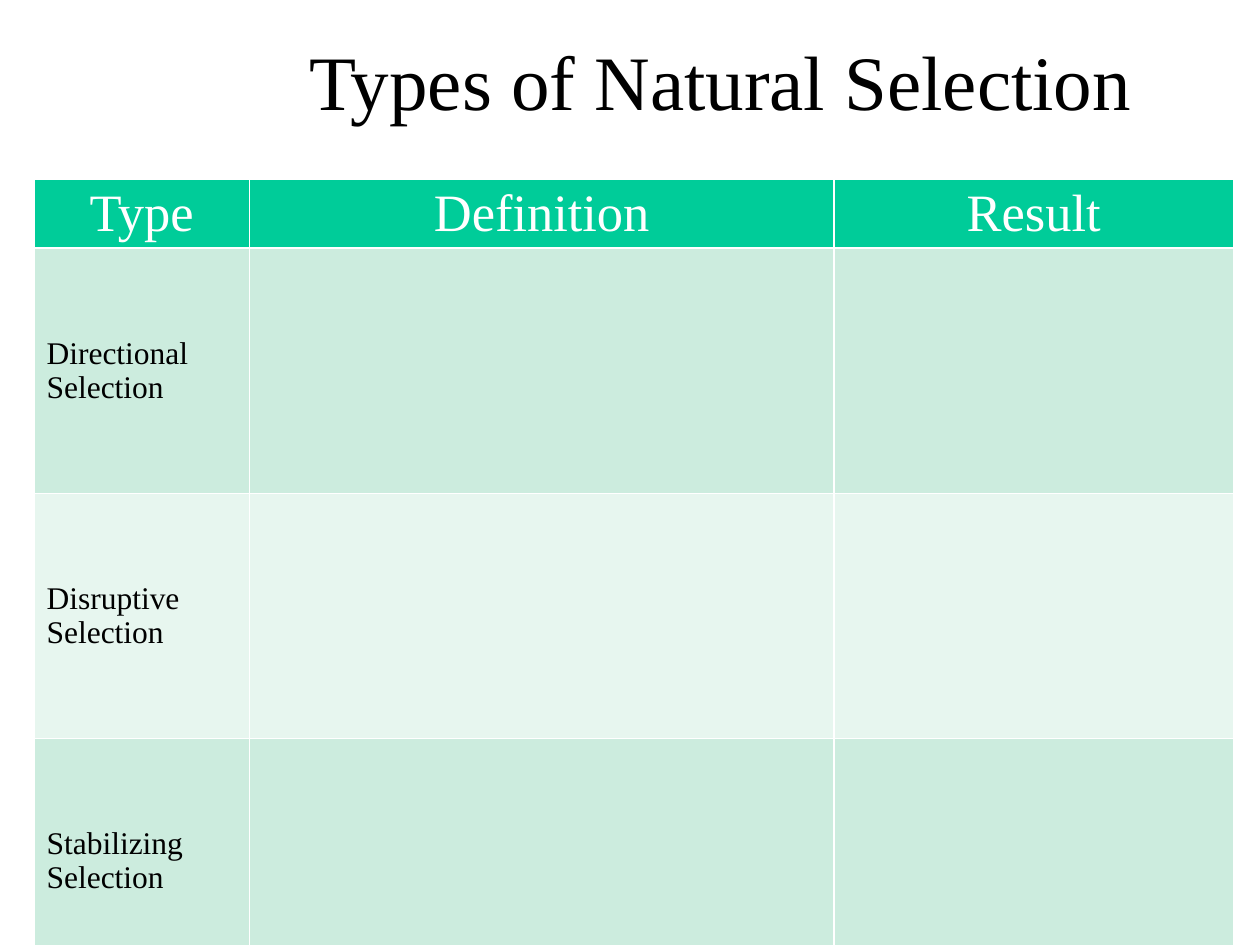
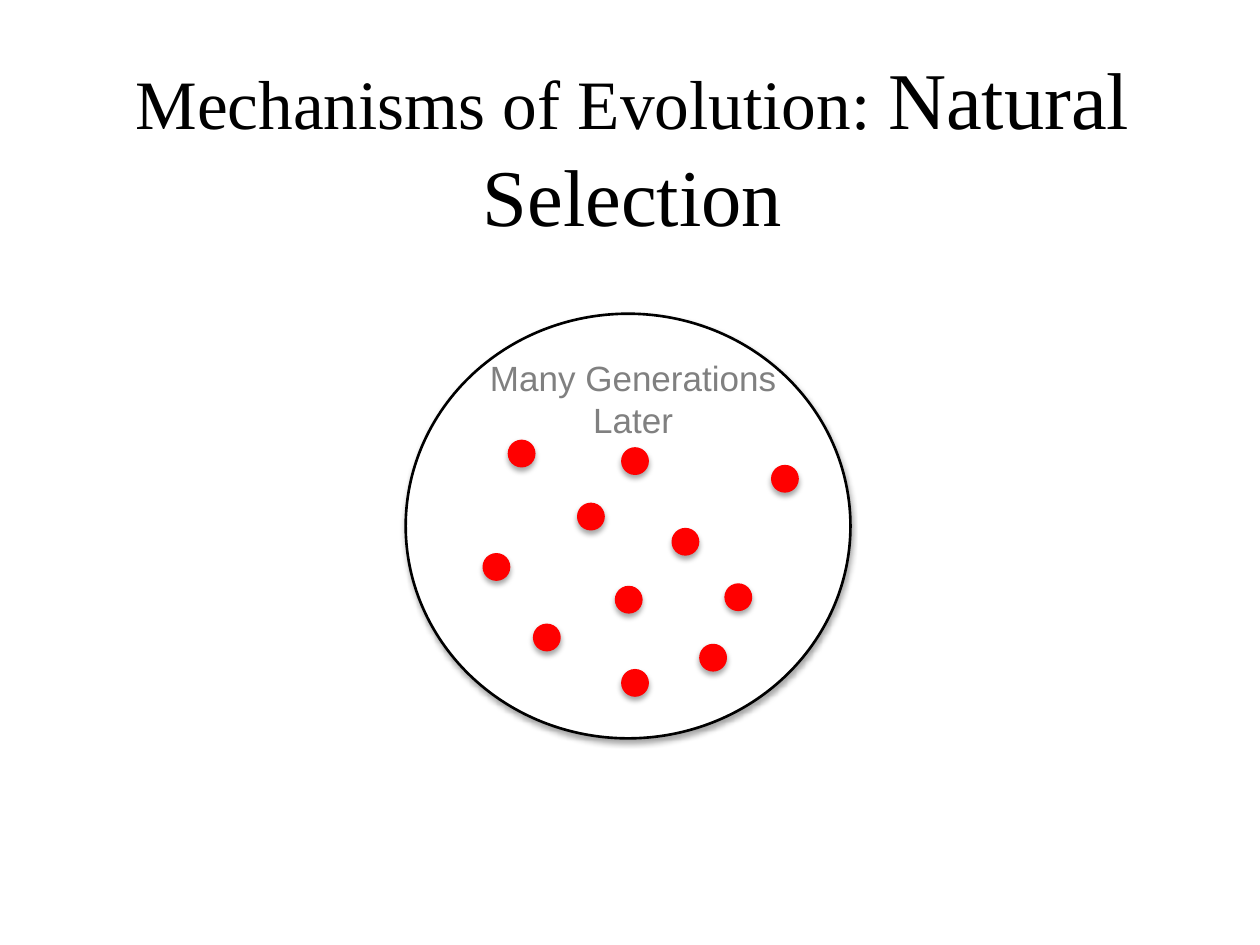
from dataclasses import dataclass

from lxml import etree
from pptx import Presentation
from pptx.dml.color import RGBColor
from pptx.enum.shapes import MSO_SHAPE
from pptx.enum.text import MSO_ANCHOR, MSO_AUTO_SIZE, PP_ALIGN
from pptx.oxml.ns import qn
from pptx.util import Inches, Pt

OVAL = MSO_SHAPE.OVAL
MIDDLE = MSO_ANCHOR.MIDDLE
NO_FIT = MSO_AUTO_SIZE.NONE
CENTER = PP_ALIGN.CENTER
LEFT = PP_ALIGN.LEFT
TITLE_ONLY = 5


@dataclass(frozen=True)
class Theme:
    serif: str = "Times New Roman"
    sans: str = "Arial"
    black: str = "000000"
    white: str = "FFFFFF"
    gray: str = "808080"
    red: str = "FF0000"
    header: str = "00CC99"
    bands: tuple = ("CCECDE", "E7F6EF")
    title_size: float = 44
    topic_size: float = 39.6
    emphasis_size: float = 46
    header_size: float = 30
    body_size: float = 18
    caption_size: float = 20
    outline: float = 1.5
    border: float = 1


class Deck:
    def __init__(self, theme):
        self.theme = theme
        self.presentation = Presentation()
        self.presentation.slide_width = Inches(10)
        self.presentation.slide_height = Inches(7.5)
        self.slide = None

    def add_slide(self):
        layout = self.presentation.slide_layouts[TITLE_ONLY]
        self.slide = self.presentation.slides.add_slide(layout)

    def style_run(self, run, font, size, color):
        run.font.name = font
        run.font.size = Pt(size)
        run.font.bold = False
        run.font.color.rgb = RGBColor.from_string(color)

    def title(self, box, parts):
        heading = self.slide.shapes.title
        heading.left, heading.top, heading.width, heading.height = map(Inches, box)
        frame = heading.text_frame
        frame.word_wrap = True
        frame.auto_size = NO_FIT
        frame.vertical_anchor = MIDDLE
        paragraph = frame.paragraphs[0]
        paragraph.alignment = CENTER
        for words, size in parts:
            run = paragraph.add_run()
            run.text = words
            self.style_run(run, self.theme.serif, size, self.theme.black)

    def caption(self, box, words):
        frame = self.slide.shapes.add_textbox(*map(Inches, box)).text_frame
        frame.word_wrap = True
        frame.margin_left = frame.margin_right = Inches(0.1)
        frame.margin_top = frame.margin_bottom = Inches(0.1)
        frame.text = words
        paragraph = frame.paragraphs[0]
        paragraph.alignment = CENTER
        self.style_run(paragraph.runs[0], self.theme.sans,
                       self.theme.caption_size, self.theme.gray)

    def oval(self, box, fill, line):
        oval = self.slide.shapes.add_shape(OVAL, *map(Inches, box))
        oval.fill.solid()
        oval.fill.fore_color.rgb = RGBColor.from_string(fill)
        oval.line.color.rgb = RGBColor.from_string(line)
        oval.line.width = Pt(self.theme.outline)
        oval.shadow.inherit = False
        effects = oval._element.spPr.find(qn("a:effectLst"))
        shadow = etree.SubElement(effects, qn("a:outerShdw"), blurRad=str(Pt(3)),
                                  dist=str(Pt(2)), dir="5400000", rotWithShape="0")
        color = etree.SubElement(shadow, qn("a:srgbClr"), val=self.theme.black)
        etree.SubElement(color, qn("a:alpha"), val="35000")

    def cell_borders(self, cell):
        properties = cell._tc.get_or_add_tcPr()
        for position, side in enumerate(("lnL", "lnR", "lnT", "lnB")):
            border = etree.Element(qn(f"a:{side}"), w=str(Pt(self.theme.border)))
            fill = etree.SubElement(border, qn("a:solidFill"))
            etree.SubElement(fill, qn("a:srgbClr"), val=self.theme.white)
            properties.insert(position, border)

    def cell(self, cell, words, fill, size, color, alignment):
        cell.fill.solid()
        cell.fill.fore_color.rgb = RGBColor.from_string(fill)
        cell.vertical_anchor = MIDDLE
        cell.margin_top = cell.margin_bottom = Inches(0.03)
        self.cell_borders(cell)
        if words:
            cell.text = words
            paragraph = cell.text_frame.paragraphs[0]
            paragraph.alignment = alignment
            self.style_run(paragraph.runs[0], self.theme.serif, size, color)

    def table(self, left, top, widths, heights, rows):
        box = map(Inches, (left, top, sum(widths), sum(heights)))
        table = self.slide.shapes.add_table(len(rows), len(widths), *box).table
        for column, width in zip(table.columns, widths):
            column.width = Inches(width)
        theme = self.theme
        for index, (row, height, texts) in enumerate(zip(table.rows, heights, rows)):
            row.height = Inches(height)
            if index == 0:
                style = (theme.header, theme.header_size, theme.white, CENTER)
            else:
                band = theme.bands[(index - 1) % 2]
                style = (band, theme.body_size, theme.black, LEFT)
            for cell, words in zip(row.cells, texts):
                self.cell(cell, words, *style)


def selection_types(deck):
    deck.add_slide()
    deck.title((1.22, 0.01, 9, 1.25),
               [("Types of Natural Selection", deck.theme.title_size)])
    kinds = ("Directional", "Disruptive", "Stabilizing")
    rows = [("Type", "Definition", "Result")]
    rows += [(f"{kind} Selection", "", "") for kind in kinds]
    heights = [0.55] + [1.945] * len(kinds)
    deck.table(0.27, 1.42, (1.71, 4.64, 3.17), heights, rows)


def later_generations(deck):
    theme = deck.theme
    deck.add_slide()
    deck.title((0.96, 0.53, 8.12, 1.25),
               [("Mechanisms of Evolution: ", theme.topic_size),
                ("Natural Selection", theme.emphasis_size)])
    deck.oval((3.22, 2.49, 3.53, 3.37), theme.white, theme.black)
    deck.caption((3.69, 2.73, 2.67, 0.5), "Many Generations Later")
    individuals = (
        (4.94, 3.56), (5.76, 4.64), (4.24, 4.96), (4.04, 3.5),
        (4.89, 4.66), (4.94, 5.32), (4.59, 4), (5.56, 5.12),
        (5.34, 4.2), (6.13, 3.7), (3.84, 4.4),
    )
    for left, top in individuals:
        deck.oval((left, top, 0.2, 0.2), theme.red, theme.red)


def main():
    deck = Deck(Theme())
    selection_types(deck)
    later_generations(deck)
    deck.presentation.save("out.pptx")


if __name__ == "__main__":
    main()
